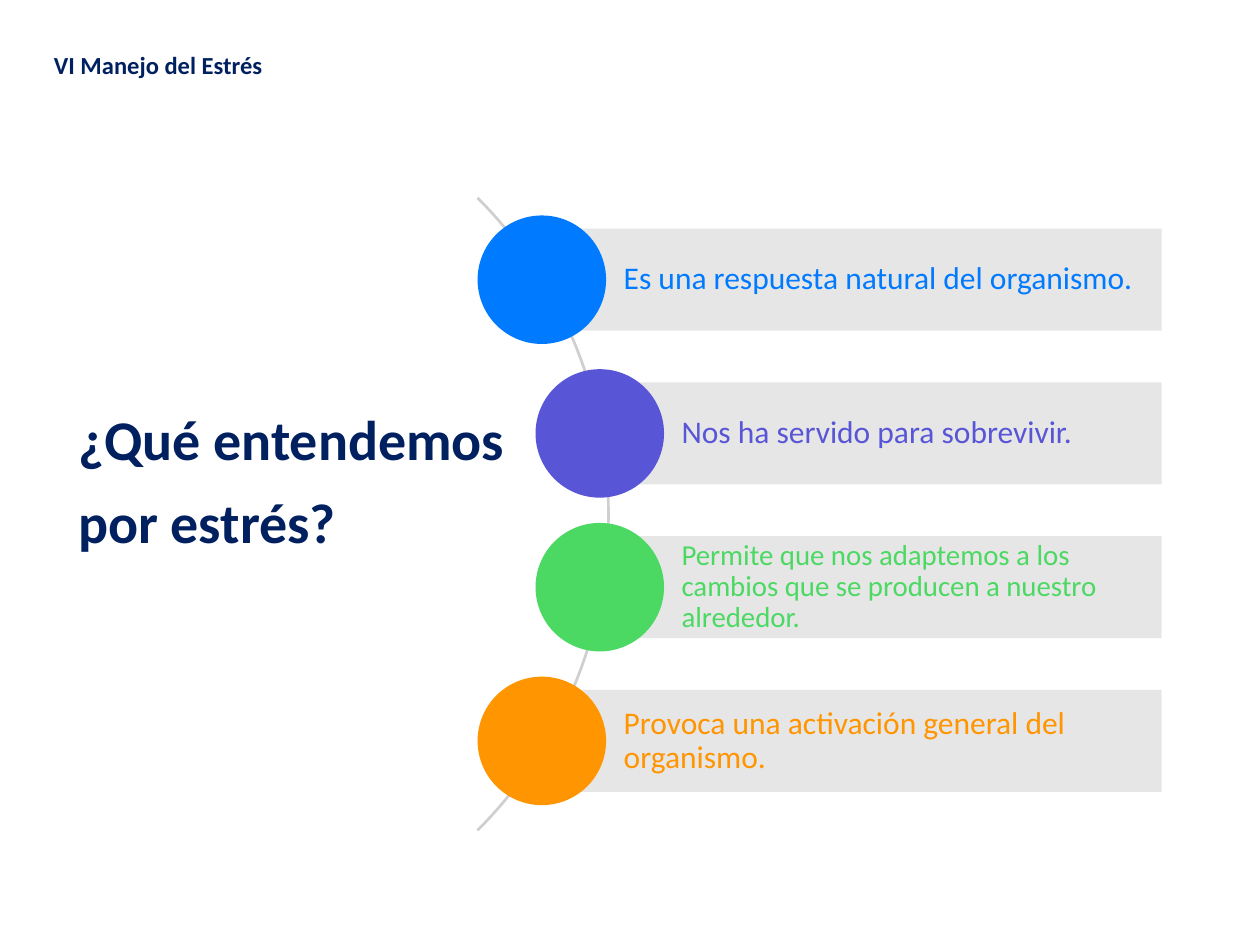
from pptx import Presentation
from pptx.dml.color import RGBColor
from pptx.enum.shapes import MSO_SHAPE
from pptx.enum.text import MSO_ANCHOR, MSO_AUTO_SIZE, PP_ALIGN
from pptx.util import Inches, Pt

COLORS = {
    "navy": "002060", "bar": "E7E6E6", "arc": "D0CECE",
    "blue": "007AFF", "violet": "5855D7", "green": "4CD963", "orange": "FF9500",
}
SECTION = "VI Manejo del Estrés"
TITLE = ["¿Qué entendemos", "por estrés?"]
# text, colour, font size, circle centre
IDEAS = [
    ("Es una respuesta natural del organismo.", "blue", 18, 4.3),
    ("Nos ha servido para sobrevivir.", "violet", 18, 4.76),
    ("Permite que nos adaptemos a los cambios que se producen a nuestro alrededor.",
     "green", 16.5, 4.76),
    ("Provoca una activación general del organismo.", "orange", 18, 4.3),
]
FIRST_CENTER, PITCH = 2.22, 1.22
BAR_RIGHT, BAR_HEIGHT, CIRCLE = 9.22, 0.81, 1.02


def add_plain_shape(page, kind, left, top, width, height, color):
    """Add a filled shape without line or shadow."""
    shape = page.shapes.add_shape(
        kind, Inches(left), Inches(top), Inches(width), Inches(height))
    shape.shadow.inherit = False
    shape.fill.solid()
    shape.fill.fore_color.rgb = RGBColor.from_string(COLORS[color])
    shape.line.fill.background()
    return shape


def format_text(frame, size, color, bold=False):
    """Left-align every paragraph and set its font."""
    for para in frame.paragraphs:
        para.alignment = PP_ALIGN.LEFT
        for span in para.runs:
            span.font.name = "Calibri"
            span.font.size = Pt(size)
            span.font.bold = bold
            span.font.color.rgb = RGBColor.from_string(COLORS[color])


def add_idea(page, center_y, text, color, size, center_x):
    """Add a bar with its text and the circle over its left end."""
    bar = add_plain_shape(page, MSO_SHAPE.RECTANGLE, center_x, center_y - BAR_HEIGHT / 2,
                          BAR_RIGHT - center_x, BAR_HEIGHT, "bar")
    frame = bar.text_frame
    frame.text = text
    frame.word_wrap = True
    frame.vertical_anchor = MSO_ANCHOR.MIDDLE
    frame.margin_left = Inches(0.65)
    frame.margin_right = frame.margin_top = frame.margin_bottom = Inches(0.05)
    frame.paragraphs[0].line_spacing = 0.9
    format_text(frame, size, color)
    add_plain_shape(page, MSO_SHAPE.OVAL, center_x - CIRCLE / 2, center_y - CIRCLE / 2,
                    CIRCLE, CIRCLE, color)


def add_headings(page):
    """Fill the title placeholder and add the section label."""
    title = page.shapes.title
    title.left, title.top = Inches(0.52), Inches(3.16)
    title.width, title.height = Inches(3.72), Inches(1.32)
    frame = title.text_frame
    frame.text = "\n".join(TITLE)
    frame.word_wrap = False
    frame.auto_size = MSO_AUTO_SIZE.SHAPE_TO_FIT_TEXT
    frame.vertical_anchor = MSO_ANCHOR.TOP
    for number, para in enumerate(frame.paragraphs):
        para.space_before = Pt(4.5 if number else 0)
        para.space_after = Pt(4.5)
    format_text(frame, 32, "navy", bold=True)

    label = page.shapes.add_textbox(Inches(0.33), Inches(0.35), Inches(4.94), Inches(0.34))
    label.text_frame.text = SECTION
    label.text_frame.word_wrap = True
    label.text_frame.auto_size = MSO_AUTO_SIZE.SHAPE_TO_FIT_TEXT
    format_text(label.text_frame, 14, "navy", bold=True)


def main():
    """Build the slide and save it."""
    deck = Presentation()
    deck.slide_width, deck.slide_height = Inches(10), Inches(7.5)
    page = deck.slides.add_slide(deck.slide_layouts[5])
    arc = add_plain_shape(page, MSO_SHAPE.BLOCK_ARC, -2.28, 0.52, 7.12, 7.12, "arc")
    for index, value in enumerate((189, 27, 0.003)):
        arc.adjustments[index] = value
    for row, idea in enumerate(IDEAS):
        add_idea(page, FIRST_CENTER + row * PITCH, *idea)
    add_headings(page)
    deck.save("out.pptx")


if __name__ == "__main__":
    main()
